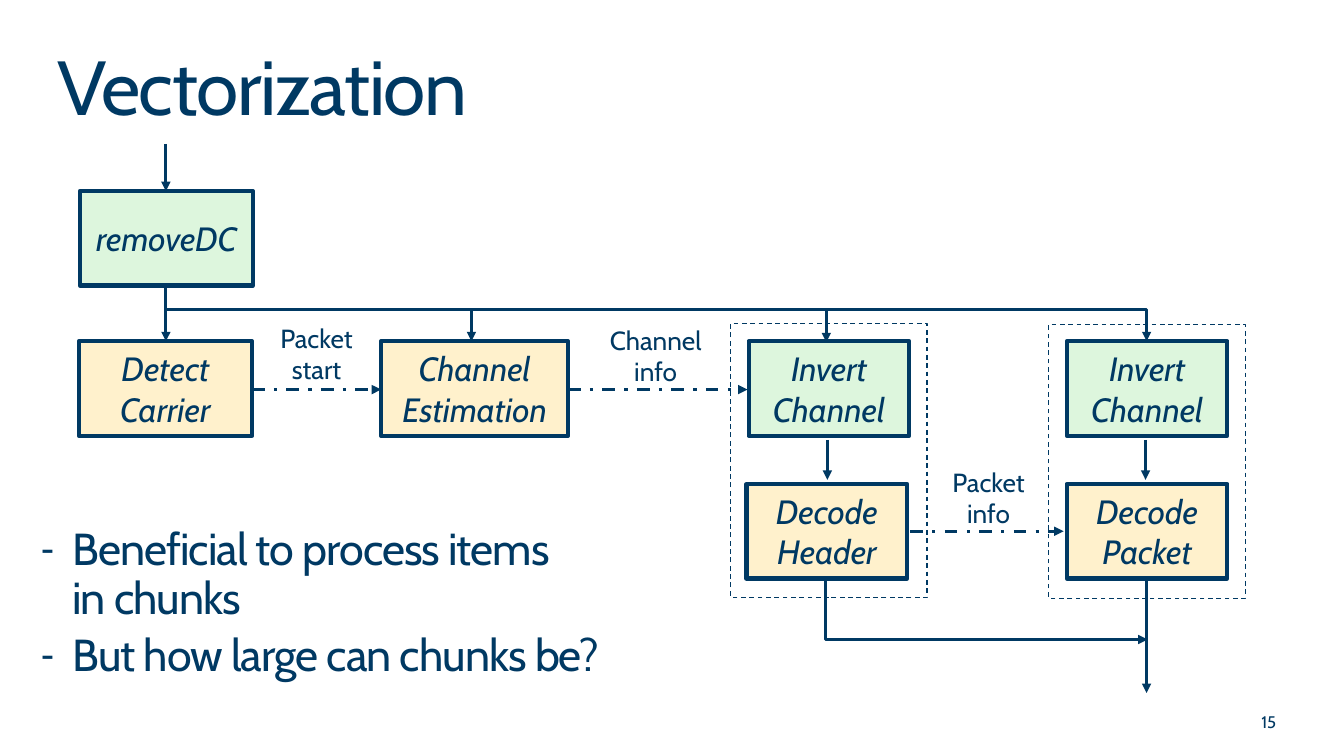
from lxml import etree
from pptx import Presentation, util as u
from pptx.dml import color
from pptx.enum import dml, shapes, text
from pptx.oxml import ns

PX = 9525
INK, GREEN, YELLOW = "003963", "DDF6DD", "FFF1CC"
BOX_H = 90
ROW_1, ROW_2, ROW_3 = 182, 325, 461


def px(*lengths):
    """Turn pixel lengths into EMU."""
    return [u.Emu(n * PX) for n in lengths]


def paint(target, hex_color):
    """Give a fill, line or font fill one solid colour."""
    target.solid()
    target.fore_color.rgb = color.RGBColor.from_string(hex_color)


def sub(parent, tag, **attrs):
    """Append a drawing element with attributes."""
    return etree.SubElement(parent, ns.qn(tag), attrs)


def write(tf, lines, size, align, anchor=text.MSO_ANCHOR.TOP, italic=False, spc=None):
    """Fill a text frame with paragraphs and format their runs."""
    tf.text = "\n".join(lines)
    tf.vertical_anchor = anchor
    for p in tf.paragraphs:
        p.alignment = align
        for r in p.runs:
            r.font.name, r.font.size, r.font.italic = "Cabin", u.Pt(size), italic
            paint(r.font.fill, INK)
            if spc is not None:
                r._r.get_or_add_rPr().set("spc", str(spc))


def placeholder(sp, box, lines, size, spc):
    """Move a template placeholder to a box and write its text."""
    sp.left, sp.top, sp.width, sp.height = px(*box)
    tf = sp.text_frame
    tf.margin_left = tf.margin_right = tf.margin_top = tf.margin_bottom = 0
    tf.word_wrap = True
    tf.auto_size = text.MSO_AUTO_SIZE.NONE
    write(tf, lines, size, text.PP_ALIGN.LEFT, spc=spc)
    for p in tf.paragraphs:
        p.line_spacing = 0.9
    return tf


def bullets(sp, box, lines):
    """Write the body list with dash bullets."""
    for p in placeholder(sp, box, lines, 32, -70).paragraphs:
        p.space_before = u.Pt(6.4)
        pPr = p._p.get_or_add_pPr()
        indent = 30 * PX
        pPr.set("marL", str(indent))
        pPr.set("indent", str(-indent))
        sub(pPr, "a:buSzPct", val="90000")
        sub(pPr, "a:buChar", char="-")


def rect(s, box, weight):
    """Add an outlined rectangle without fill."""
    sp = s.shapes.add_shape(shapes.MSO_SHAPE.RECTANGLE, *px(*box))
    sp.shadow.inherit = False
    sp.fill.background()
    paint(sp.line.fill, INK)
    sp.line.width = u.Pt(weight)
    return sp


def block(s, x, y, w, label, fill):
    """Add one processing block."""
    sp = rect(s, (x, y, w, BOX_H), 3)
    paint(sp.fill, fill)
    write(sp.text_frame, [label], 24, text.PP_ALIGN.CENTER, text.MSO_ANCHOR.MIDDLE, italic=True)


def label(s, box, words, size=18.7, align=text.PP_ALIGN.CENTER, anchor=text.MSO_ANCHOR.TOP):
    """Add a text label."""
    tf = s.shapes.add_textbox(*px(*box)).text_frame
    tf.word_wrap = False
    write(tf, [words], size, align, anchor)


def arrow(s, ends, dash=None, bend=None, adj=None):
    """Add a straight or bent arrow."""
    kind = shapes.MSO_CONNECTOR.ELBOW if bend else shapes.MSO_CONNECTOR.STRAIGHT
    c = s.shapes.add_connector(kind, *px(*ends))
    paint(c.line.fill, INK)
    c.line.width = u.Pt(2.25)
    if dash:
        c.line.dash_style = dash
    spPr = c._element.spPr
    sub(spPr.find(ns.qn("a:ln")), "a:tailEnd", type="triangle")
    sub(spPr, "a:effectLst")
    if bend:
        geom = spPr.find(ns.qn("a:prstGeom"))
        geom.set("prst", bend)
        if adj is not None:
            sub(geom.find(ns.qn("a:avLst")), "a:gd", name="adj1", fmla=f"val {adj}")


def detection(s, x):
    """Draw the input, detection and estimation blocks."""
    block(s, x + 1, ROW_1, 165, "removeDC", GREEN)
    block(s, x, ROW_2, 165, "Detect\vCarrier", YELLOW)
    block(s, x + 288, ROW_2, 178, "Channel\vEstimation", YELLOW)
    for top, bottom in ((137, ROW_1), (ROW_1 + BOX_H, ROW_2)):
        arrow(s, (x + 83, top, x + 83, bottom))
    arrow(s, (x + 374, 295, x + 374, ROW_2))


def decoder(s, x, y, second, header_x):
    """Draw a dashed stage that inverts the channel and then decodes."""
    rect(s, (x, y, 187, 261), 0.85).line.dash_style = dml.MSO_LINE.DASH
    block(s, x + 17, ROW_2, 153, "Invert\vChannel", GREEN)
    block(s, header_x, ROW_3, 153, second, YELLOW)
    arrow(s, (x + 92, 419, x + 92, 457))


def links(s):
    """Draw the signals that run between the stages."""
    for ends in ((240, 371, 363, 371), (541, 371, 712, 371), (867, 506, 1013, 506)):
        arrow(s, ends, dash=dml.MSO_LINE.DASH_DOT)
    for box, words in (((256, 302, 91, 70), "Packet\vstart"),
                       ((566, 304, 117, 70), "Channel\vinfo"),
                       ((896, 439, 91, 70), "Packet\vinfo")):
        label(s, box, words)
    arrow(s, (157, 295, 1092, 325), bend="bentConnector2")
    arrow(s, (787, 295, 787, 326))
    arrow(s, (1092, 552, 1092, 660))
    arrow(s, (795, 551, 1093, 609), bend="bentConnector3", adj=-2900)


def main():
    """Build and save the slide."""
    prs = Presentation()
    prs.slide_width, prs.slide_height = px(1280, 720)
    s = prs.slides.add_slide(prs.slide_layouts[1])
    placeholder(s.shapes.title, (55, 47, 1171, 80), ["Vectorization"], 54.7, -100)
    bullets(s.placeholders[1], (39, 502, 631, 150),
            ["Beneficial to process items\vin chunks", "But how large can chunks be?"])
    detection(s, 75)
    decoder(s, 696, 308, "Decode Header", 711)
    decoder(s, 999, 309, "Decode Packet", 1016)
    links(s)
    label(s, (1001, 673, 224, 29), "15", 12, text.PP_ALIGN.RIGHT, text.MSO_ANCHOR.MIDDLE)
    prs.save("out.pptx")


if __name__ == "__main__":
    main()
